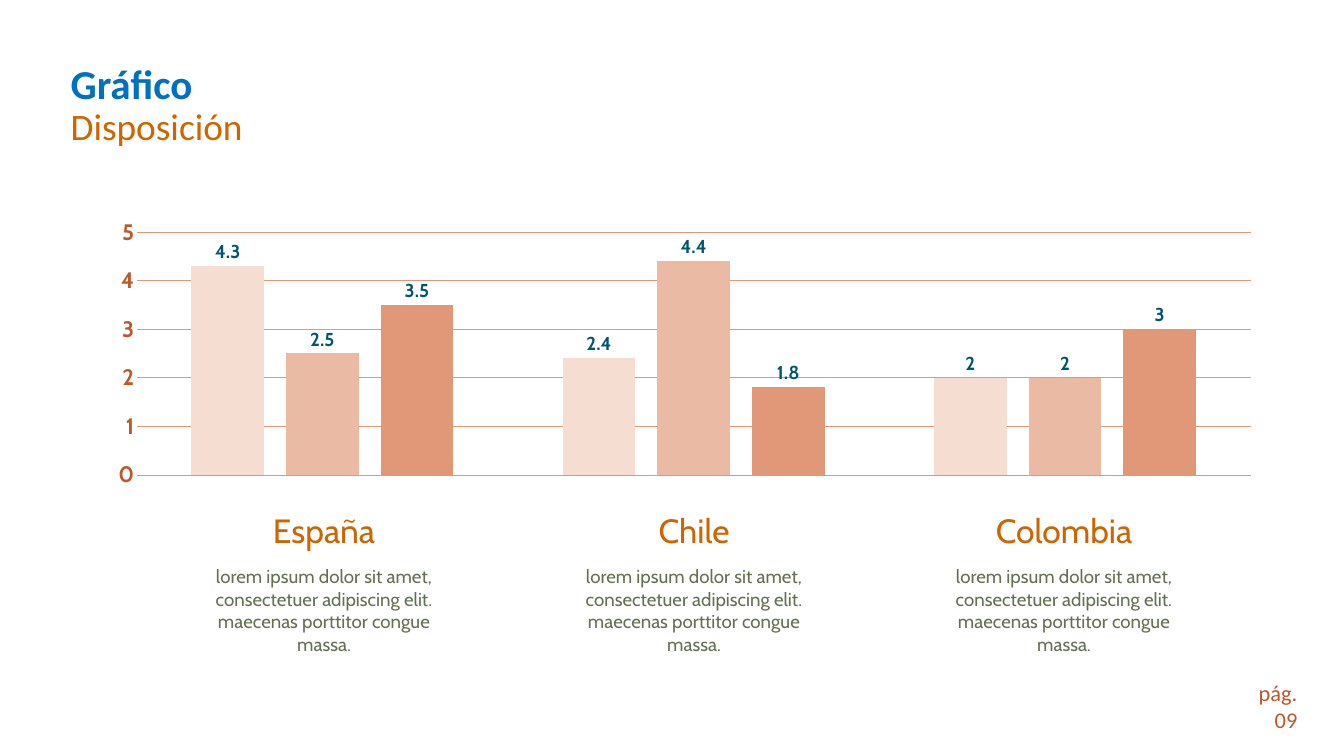
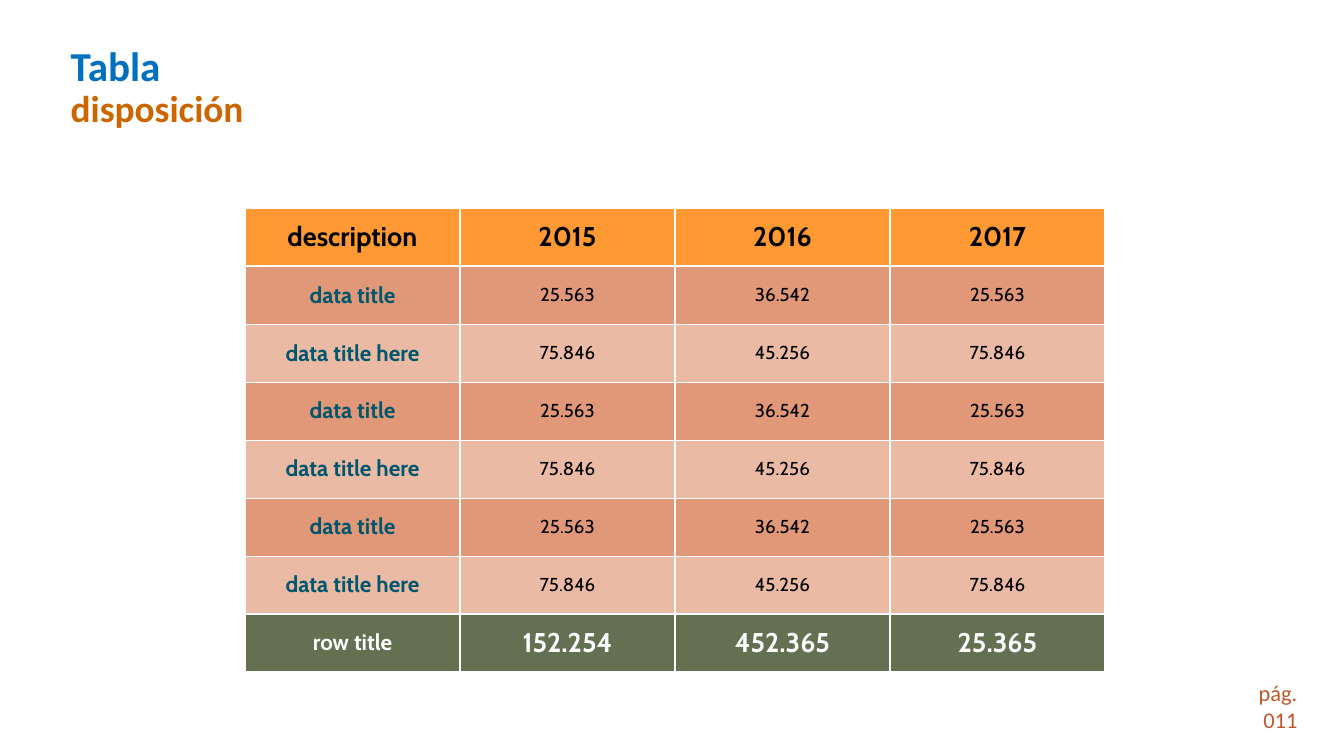
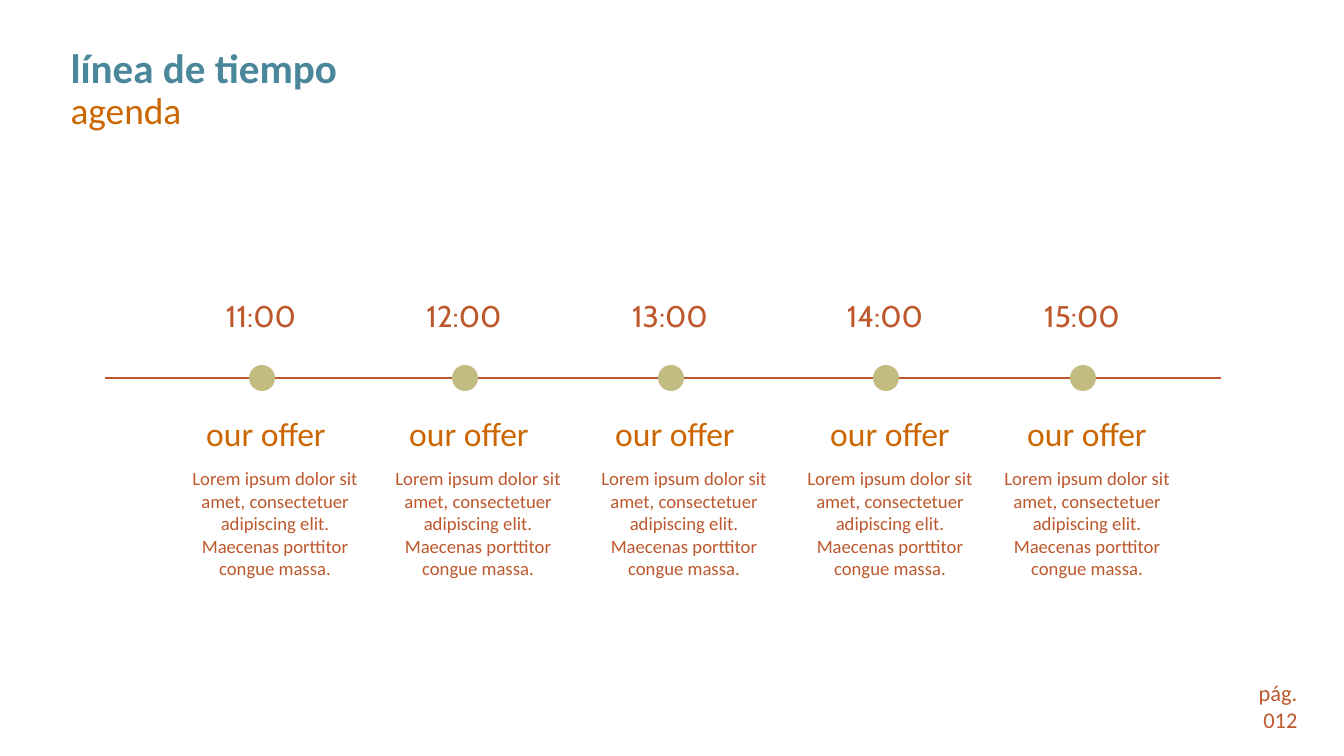
from lxml import etree
from pptx import Presentation
from pptx.chart.data import CategoryChartData
from pptx.dml.color import RGBColor
from pptx.enum.chart import XL_CHART_TYPE, XL_LABEL_POSITION, XL_TICK_MARK
from pptx.enum.shapes import MSO_CONNECTOR, MSO_SHAPE
from pptx.enum.text import MSO_ANCHOR, MSO_AUTO_SIZE, PP_ALIGN
from pptx.oxml import parse_xml
from pptx.oxml.ns import nsdecls, qn
from pptx.util import Pt

LEFT, CENTER, RIGHT = PP_ALIGN.LEFT, PP_ALIGN.CENTER, PP_ALIGN.RIGHT
TOP, MIDDLE = MSO_ANCHOR.TOP, MSO_ANCHOR.MIDDLE
GROW = MSO_AUTO_SIZE.SHAPE_TO_FIT_TEXT
COLUMNS = XL_CHART_TYPE.COLUMN_CLUSTERED
OUTSIDE_END = XL_LABEL_POSITION.OUTSIDE_END
NO_TICK = XL_TICK_MARK.NONE
STRAIGHT = MSO_CONNECTOR.STRAIGHT
OVAL = MSO_SHAPE.OVAL

BLACK = RGBColor(0x00, 0x00, 0x00)
WHITE = RGBColor(0xFF, 0xFF, 0xFF)
BLUE = RGBColor(0x00, 0x70, 0xC0)
STEEL = RGBColor(0x4A, 0x87, 0x9B)
TEAL = RGBColor(0x00, 0x56, 0x6C)
ORANGE = RGBColor(0xCC, 0x66, 0x00)
AMBER = RGBColor(0xFF, 0x99, 0x33)
RUST = RGBColor(0xBD, 0x58, 0x2C)
MOSS = RGBColor(0x63, 0x70, 0x52)
OLIVE = RGBColor(0xC2, 0xBC, 0x80)
PALE = RGBColor(0xF5, 0xDD, 0xD2)
PEACH = RGBColor(0xEA, 0xBA, 0xA5)
SALMON = RGBColor(0xE0, 0x98, 0x78)

CABIN, CALIBRI = "Cabin", "Calibri"
PX_PER_INCH = 67.2

# Content: titles are (heading, colour, subtitle, subtitle bold, top, page)
CHART_TITLE = ("Gráfico", BLUE, "Disposición", False, 60, "09")
TABLE_TITLE = ("Tabla", BLUE, "disposición", True, 42, "011")
TIMELINE_TITLE = ("línea de tiempo", STEEL, "agenda", False, 44, "012")

SERIES = [
    ("Category 1", (4.3, 2.4, 2), PALE),
    ("Category 2", (2.5, 4.4, 2), PEACH),
    ("Category 3", (3.5, 1.8, 3), SALMON),
]
PLOT_AREA = {"x": 0.037, "y": 0.165, "w": 0.963, "h": 0.702}
COUNTRIES = ["España", "Chile", "Colombia"]
COUNTRY_TEXT = ("lorem ipsum dolor sit amet, consectetuer adipiscing elit. "
                "maecenas porttitor congue massa.")

ODD_ROW = ("data title", "25.563", "36.542", "25.563")
EVEN_ROW = ("data title here", "75.846", "45.256", "75.846")
TABLE_ROWS = [
    ("description", "2015", "2016", "2017"),
    *[ODD_ROW, EVEN_ROW] * 3,
    ("row title", "152.254", "452.365", "25.365"),
]

# Hour, centre of its dot, shift of its description
AGENDA = [("11:00", 262, 13), ("12:00", 465, 13), ("13:00", 671, 13),
          ("14:00", 886, 4), ("15:00", 1083, 4)]
OFFER = "our offer"
OFFER_TEXT = ("Lorem ipsum dolor sit amet, consectetuer adipiscing elit. "
              "Maecenas porttitor congue massa.")


def px(*lengths):
    return [round(length * 914400 / PX_PER_INCH) for length in lengths]


def style(font, size, color, name, bold=False):
    font.size, font.name, font.bold = Pt(size), name, bold
    font.color.rgb = color


def add_text(slide, box, lines, size, color, name, align=CENTER):
    frame = slide.shapes.add_textbox(*px(*box)).text_frame
    frame.word_wrap = True
    frame.auto_size = GROW
    frame.text = "\n".join(lines)
    for paragraph in frame.paragraphs:
        paragraph.alignment = align
        style(paragraph.font, size, color, name)


def add_centered(slide, center, top, width, height, text, size, color, name):
    box = (center - width / 2, top, width, height)
    add_text(slide, box, [text], size, color, name)


def add_slide(deck, title):
    """Blank slide with the shared two-line title and page number."""
    heading, color, subtitle, subtitle_bold, top, page = title
    slide = deck.slides.add_slide(deck.slide_layouts[6])
    add_text(slide, (1176, 676, 128, 61), ["pág.", page], 24, RUST, CALIBRI, RIGHT)

    frame = slide.shapes.add_textbox(*px(64, top, 401, 92)).text_frame
    frame.word_wrap = True
    frame.auto_size = GROW
    frame.vertical_anchor = MIDDLE
    paragraph = frame.paragraphs[0]
    paragraph.alignment = LEFT
    paragraph.line_spacing = 0.9
    run = paragraph.add_run()
    run.text = heading
    style(run.font, 44, color, CALIBRI, True)
    paragraph.add_line_break()
    run = paragraph.add_run()
    run.text = subtitle
    style(run.font, 40, ORANGE, CALIBRI, subtitle_bold)
    return slide


def place_plot(chart):
    """Fix the inner plot area inside the chart frame."""
    parts = [("layoutTarget", "inner")]
    parts += [(side + "Mode", "edge") for side in "xy"]
    parts += PLOT_AREA.items()
    inner = "".join(f'<c:{tag} val="{value}"/>' for tag, value in parts)
    layout = parse_xml(f'<c:layout {nsdecls("c")}><c:manualLayout>{inner}'
                       '</c:manualLayout></c:layout>')
    plot_area = chart.plots[0]._element.getparent()
    for automatic in plot_area.findall(qn("c:layout")):
        plot_area.remove(automatic)
    plot_area.insert(0, layout)


def build_chart_slide(deck):
    slide = add_slide(deck, CHART_TITLE)
    data = CategoryChartData()
    data.categories = ["1", "2", "3"]
    for name, values, _ in SERIES:
        data.add_series(name, values)
    chart = slide.shapes.add_chart(COLUMNS, *px(94, 175, 1157, 346), data).chart
    chart.has_title = chart.has_legend = False
    style(chart.font, 10, BLACK, CABIN)
    place_plot(chart)

    # Axes
    chart.category_axis.visible = False
    axis = chart.value_axis
    axis.minimum_scale, axis.maximum_scale, axis.major_unit = 0, 5, 1
    axis.major_tick_mark = axis.minor_tick_mark = NO_TICK
    axis.format.line.fill.background()
    axis.major_gridlines.format.line.color.rgb = SALMON
    axis.major_gridlines.format.line.width = Pt(0.75)
    style(axis.tick_labels.font, 24, RUST, CABIN, True)

    # Columns and their values
    plot = chart.plots[0]
    plot.gap_width, plot.overlap = 150, -30
    plot.vary_by_categories = False
    for series, (_, _, color) in zip(plot.series, SERIES):
        series.format.fill.solid()
        series.format.fill.fore_color.rgb = color
        labels = series.data_labels
        labels.show_value = True
        labels.position = OUTSIDE_END
        style(labels.font, 20, TEAL, CABIN, True)

    # Countries below the columns
    for index, country in enumerate(COUNTRIES):
        center = 324 + 370 * index
        add_centered(slide, center, 562, 271, 97, COUNTRY_TEXT, 20, MOSS, CABIN)
        add_centered(slide, center, 507, 204, 48, country, 36, ORANGE, CABIN)


def set_borders(cell, top, bottom):
    properties = cell._tc.get_or_add_tcPr()
    widths = {"lnL": 3, "lnR": 3, "lnT": top, "lnB": bottom}
    for index, (side, width) in enumerate(widths.items()):
        properties.insert(index, parse_xml(
            f'<a:{side} {nsdecls("a")} w="{Pt(width)}"><a:solidFill>'
            f'<a:srgbClr val="{WHITE}"/></a:solidFill></a:{side}>'))


def cell_look(row, column):
    """Fill, size, text colour and weight of a table cell."""
    if row == 0:
        return AMBER, 29, BLACK, True
    if row == len(TABLE_ROWS) - 1:
        return MOSS, 29 if column else 24, WHITE, True
    band = SALMON if row % 2 else PEACH
    return (band, 20, BLACK, False) if column else (band, 24, TEAL, True)


def build_table_slide(deck):
    slide = add_slide(deck, TABLE_TITLE)
    count = len(TABLE_ROWS)
    table = slide.shapes.add_table(count, 4, *px(245, 208, 860, 58 * count)).table
    heavy_edges = {0, 1, count - 1, count}
    for row, texts in enumerate(TABLE_ROWS):
        top, bottom = (3 if edge in heavy_edges else 1 for edge in (row, row + 1))
        for column, text in enumerate(texts):
            fill, size, color, bold = cell_look(row, column)
            cell = table.cell(row, column)
            cell.text = text
            cell.vertical_anchor = MIDDLE
            cell.fill.solid()
            cell.fill.fore_color.rgb = fill
            set_borders(cell, top, bottom)
            paragraph = cell.text_frame.paragraphs[0]
            paragraph.alignment = CENTER
            style(paragraph.font, size, color, CABIN, bold)


def build_timeline_slide(deck):
    slide = add_slide(deck, TIMELINE_TITLE)
    axis = slide.shapes.add_connector(STRAIGHT, *px(1221, 378, 105, 378))
    axis.line.color.rgb = RUST
    axis.line.width = Pt(2)
    etree.SubElement(axis._element.spPr, qn("a:effectLst"))

    for hour, center, shift in AGENDA:
        dot = slide.shapes.add_shape(OVAL, *px(center - 13, 365, 26, 26))
        dot.shadow.inherit = False
        dot.fill.solid()
        dot.fill.fore_color.rgb = OLIVE
        dot.line.fill.background()
        add_centered(slide, center + 4, 410, 282, 48, OFFER, 36, ORANGE, CALIBRI)
        add_centered(slide, center - 1, 294, 108, 43, hour, 32, RUST, CABIN)
        add_centered(slide, center + shift, 464, 193, 120, OFFER_TEXT, 20, RUST, CALIBRI)


def main():
    deck = Presentation()
    deck.slide_width, deck.slide_height = px(1344, 756)
    build_chart_slide(deck)
    build_table_slide(deck)
    build_timeline_slide(deck)
    deck.save("out.pptx")


if __name__ == "__main__":
    main()
